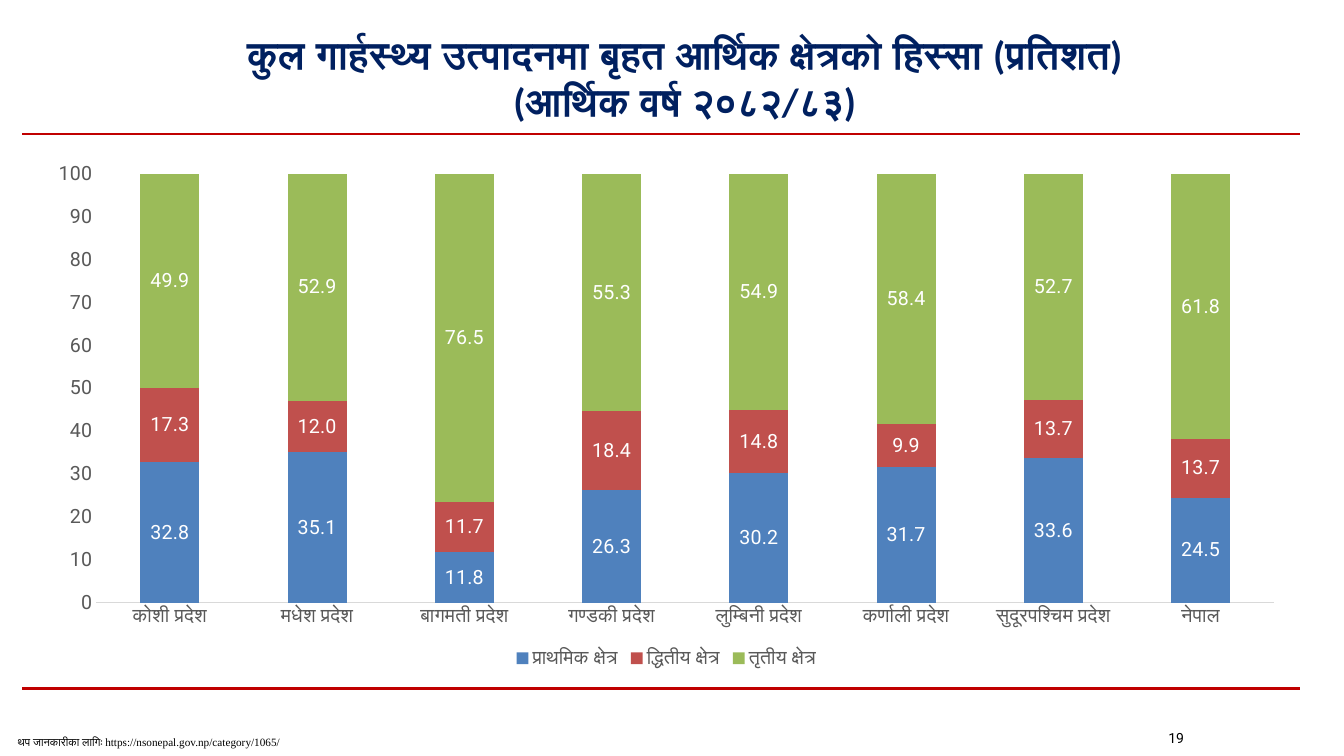
from dataclasses import dataclass

from lxml.etree import SubElement
from pptx import Presentation
from pptx.chart.data import CategoryChartData
from pptx.dml.color import RGBColor
from pptx.enum.chart import XL_CHART_TYPE, XL_LABEL_POSITION, XL_LEGEND_POSITION, XL_TICK_MARK
from pptx.enum.shapes import MSO_CONNECTOR
from pptx.enum.text import MSO_ANCHOR, MSO_AUTO_SIZE, PP_ALIGN
from pptx.oxml.ns import qn
from pptx.util import Inches, Pt


@dataclass(frozen=True)
class Theme:
    navy: str = "002060"
    rule: str = "C00000"
    black: str = "000000"
    white: str = "FFFFFF"
    grey: str = "595959"
    axis: str = "D9D9D9"
    sectors: tuple = ("4F81BD", "C0504D", "9BBB59")
    body: str = "Calibri"
    serif: str = "Times New Roman"
    digits: str = "Roboto"
    title_size: int = 28
    chart_size: int = 14
    page_size: int = 10
    note_size: int = 8


THEME = Theme()

PROVINCES = ("कोशी प्रदेश", "मधेश प्रदेश", "बागमती प्रदेश", "गण्डकी प्रदेश",
             "लुम्बिनी प्रदेश", "कर्णाली प्रदेश", "सुदूरपश्चिम प्रदेश", "नेपाल")
SECTOR_SHARES = {
    "प्राथमिक क्षेत्र": (32.8, 35.1, 11.8, 26.3, 30.2, 31.7, 33.6, 24.5),
    "द्धितीय क्षेत्र": (17.3, 12, 11.7, 18.4, 14.8, 9.9, 13.7, 13.7),
    "तृतीय क्षेत्र": (49.9, 52.9, 76.5, 55.3, 54.9, 58.4, 52.7, 61.8),
}


def set_attrs(obj, **values):
    for name, value in values.items():
        setattr(obj, name, value)


def style_font(font, name, size, color, bold=False):
    set_attrs(font, name=name, size=Pt(size), bold=bold)
    font.color.rgb = RGBColor.from_string(color)


def place(sp, box):
    for name, value in zip(("left", "top", "width", "height"), box):
        setattr(sp, name, Inches(value))


def add_title(s, box):
    sp = s.shapes.title
    place(sp, box)
    tf = sp.text_frame
    set_attrs(tf, word_wrap=True, auto_size=MSO_AUTO_SIZE.NONE, vertical_anchor=MSO_ANCHOR.MIDDLE)
    p = tf.paragraphs[0]
    p.alignment = PP_ALIGN.CENTER
    style_font(p.font, THEME.body, THEME.title_size, THEME.navy, True)
    for text, face in (("कुल गार्हस्थ्य उत्पादनमा ", THEME.body),
                       ("बृहत आर्थिक क्षेत्रको ", THEME.serif),
                       ("हिस्सा (प्रतिशत)", THEME.body),
                       ("(आर्थिक वर्ष २०८२/८३)", THEME.body)):
        if text.startswith("("):
            p.add_line_break()
        r = p.add_run()
        r.text = text
        style_font(r.font, face, THEME.title_size, THEME.navy, True)


def add_rules(s, box):
    left, top, width, height = box
    for y in (top, top + height):
        line = s.shapes.add_connector(MSO_CONNECTOR.STRAIGHT, Inches(left), Inches(y),
                                      Inches(left + width), Inches(y))
        line.line.color.rgb = RGBColor.from_string(THEME.rule)
        line.line.width = Pt(1.5)
        SubElement(line._element.spPr, qn("a:effectLst"))


def add_sector_chart(s, box):
    data = CategoryChartData(number_format="0.0")
    data.categories = PROVINCES
    for sector, shares in SECTOR_SHARES.items():
        data.add_series(sector, shares)
    chart = s.shapes.add_chart(XL_CHART_TYPE.COLUMN_STACKED,
                               *(Inches(v) for v in box), data).chart
    style_font(chart.font, THEME.body, THEME.page_size, THEME.black)
    set_attrs(chart, has_title=False, has_legend=True)

    # Legend
    set_attrs(chart.legend, position=XL_LEGEND_POSITION.BOTTOM, include_in_layout=False)
    style_font(chart.legend.font, THEME.body, THEME.chart_size, THEME.grey)

    # Axes
    for axis, face in ((chart.category_axis, THEME.body), (chart.value_axis, THEME.digits)):
        set_attrs(axis, has_major_gridlines=False, major_tick_mark=XL_TICK_MARK.NONE,
                  minor_tick_mark=XL_TICK_MARK.NONE)
        style_font(axis.tick_labels.font, face, THEME.chart_size, THEME.grey)
    line = chart.category_axis.format.line
    line.color.rgb = RGBColor.from_string(THEME.axis)
    line.width = Pt(0.75)
    set_attrs(chart.value_axis, minimum_scale=0, maximum_scale=100, major_unit=10)
    set_attrs(chart.value_axis.tick_labels, number_format="0", number_format_is_linked=False)
    chart.value_axis.format.line.fill.background()

    # Stacked sectors
    plot = chart.plots[0]
    set_attrs(plot, gap_width=150, overlap=100, vary_by_categories=False)
    for series, color in zip(plot.series, THEME.sectors):
        series.format.fill.solid()
        series.format.fill.fore_color.rgb = RGBColor.from_string(color)
        labels = series.data_labels
        set_attrs(labels, show_value=True, position=XL_LABEL_POSITION.CENTER,
                  number_format="0.0", number_format_is_linked=False)
        style_font(labels.font, THEME.digits, THEME.chart_size, THEME.white)


def add_footer_text(s, box, text, face, size):
    tf = s.shapes.add_textbox(*(Inches(v) for v in box)).text_frame
    tf.word_wrap = True
    r = tf.paragraphs[0].add_run()
    r.text = text
    style_font(r.font, face, size, THEME.black)


def build_sector_slide(prs):
    s = prs.slides.add_slide(prs.slide_layouts[5])
    add_rules(s, (0.22, 1.33, 12.67, 5.5))
    add_title(s, (1.25, 0.25, 11.08, 1.03))
    add_sector_chart(s, (0.33, 1.5, 12.56, 5.17))
    # Source note and page number
    add_footer_text(s, (0.08, 7.25, 2.89, 0.2),
                    "थप जानकारीका लागिः https://nsonepal.gov.np/category/1065/",
                    THEME.serif, THEME.note_size)
    add_footer_text(s, (11.49, 7.19, 1.78, 0.23), "19", THEME.digits, THEME.page_size)


def main():
    prs = Presentation()
    set_attrs(prs, slide_width=Inches(13.33), slide_height=Inches(7.5))
    build_sector_slide(prs)
    prs.save("out.pptx")


if __name__ == "__main__":
    main()
